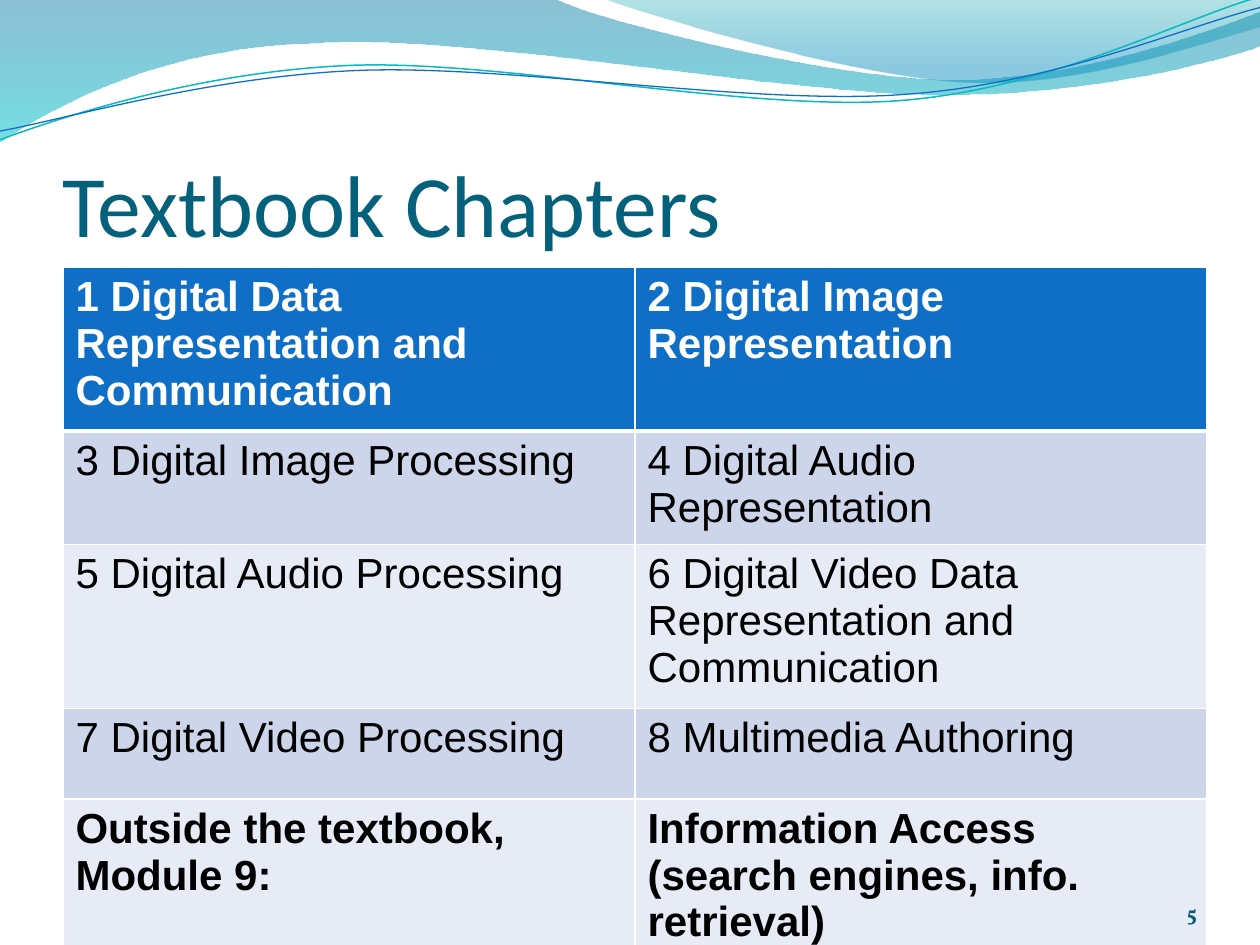
"""Build the Textbook Chapters slide: wave header, title, chapter table and page number."""
from lxml.etree import SubElement
from pptx import Presentation
from pptx.dml.color import RGBColor
from pptx.enum.text import MSO_ANCHOR as Anchor, PP_ALIGN as Align
from pptx.oxml import parse_xml
from pptx.oxml.ns import nsdecls, qn
from pptx.util import Inches, Pt

CHAPTERS = [
    ("1 Digital Data Representation and Communication", "2 Digital Image Representation"),
    ("3 Digital Image Processing", "4 Digital Audio Representation"),
    ("5 Digital Audio Processing", "6 Digital Video Data Representation and Communication"),
    ("7 Digital Video Processing", "8 Multimedia Authoring"),
    ("Outside the textbook, Module 9:", "Information Access (search engines, info. retrieval)"),
]
ROW_HEIGHTS = [1.24, 0.84, 1.24, 0.72, 1.22]
COLUMN_WIDTH = 4.54
HEADER_FILL, BAND_FILLS = "0F6FC6", ("E7EBF5", "CCD5EA")

WAVES = [
    {"steps": [(0, 0), (4.4, -0.01),
               (4.76, 0.17, 6.64, 0.63, 7.58, 0.63), (8.53, 0.63, 9.58, 0.26, 10, 0.09),
               (10.01, 0.36),
               (9.83, 0.44, 8.7, 0.76, 7.46, 0.75), (6.22, 0.75, 3.82, 0.28, 2.57, 0.34),
               (1.29, 0.36, 0.46, 0.83, -0.01, 1.13), (0, 0)],
     "stops": [(0, "0074A1", 45), (1, "00C6CF", 55)]},
    {"steps": [(4.79, -0.01),
               (5.09, 0.11, 6.82, 0.62, 7.69, 0.65), (8.56, 0.69, 9.61, 0.32, 10, 0.21),
               (10, 0), (4.79, -0.01)],
     "stops": [(0, "00A1A9", 30), (0.8, "008BBF", 45)]},
    {"steps": [(0, 1.11),
               (0.48, 0.93, 1.58, 0.57, 2.77, 0.52), (3.95, 0.47, 5.93, 0.89, 7.13, 0.8),
               (8.33, 0.71, 9.38, 0.15, 9.98, -0.02)],
     "line": ("0AB8BF", 0.85)},
    {"steps": [(0, 1.04),
               (0.47, 0.96, 1.64, 0.61, 2.83, 0.56), (4.03, 0.51, 5.97, 0.84, 7.17, 0.75),
               (8.36, 0.67, 9.41, 0.21, 10, 0.06)],
     "line": ("0F6FC6", 0.75)},
]
TEXTS = [
    {"text": "Textbook Chapters", "at": (0.5, 0.77, 9, 1.25), "top": 0.05, "align": Align.LEFT,
     "font": {"size": Pt(50), "name": "Calibri", "bold": False}, "color": "04617B"},
    {"text": "5", "at": (8.67, 6.95, 0.83, 0.4), "top": 0, "align": Align.RIGHT,
     "font": {"size": Pt(12), "name": "Vollkorn", "bold": True}, "color": "045D75"},
]


def rgb(color):
    return RGBColor.from_string(color)


def set_all(target, values):
    for name, value in values.items():
        setattr(target, name, value)


def write(frame, text, font, color, align=Align.LEFT):
    para = frame.paragraphs[0]
    para.alignment = align
    span = para.add_run()
    span.text = text
    set_all(span.font, font)
    span.font.color.rgb = rgb(color)


def draw_outline(page, steps, close):
    ends = [(Inches(step[-2]), Inches(step[-1])) for step in steps]
    builder = page.shapes.build_freeform(*ends[0])
    builder.add_line_segments(ends[1:], close=close)
    wave = builder.convert_to_shape()
    segments = list(wave._element.spPr.iter(qn("a:lnTo")))
    for segment, step in zip(segments, steps[1:]):
        if len(step) == 6:
            curve = segment.makeelement(qn("a:cubicBezTo"))
            for x, y in zip(step[::2], step[1::2]):
                point = SubElement(curve, qn("a:pt"))
                point.set("x", str(Inches(x) - wave.left))
                point.set("y", str(Inches(y) - wave.top))
            segment.getparent().replace(segment, curve)
    return wave


def add_wave(page, steps, stops=None, line=None):
    wave = draw_outline(page, steps, close=bool(stops))
    wave.shadow.inherit = False
    if line:
        wave.fill.background()
        wave.line.color.rgb = rgb(line[0])
        wave.line.width = Pt(line[1])
        return
    wave.line.fill.background()
    wave.fill.gradient()
    wave.fill.gradient_angle = 270
    for stop, (position, color, _) in zip(wave.fill.gradient_stops, stops):
        stop.position = position
        stop.color.rgb = rgb(color)
    for node, (_, _, opacity) in zip(wave._element.spPr.iter(qn("a:srgbClr")), stops):
        SubElement(node, qn("a:alpha")).set("val", str(opacity * 1000))


def add_text(page, text, at, top, align, font, color):
    frame = page.shapes.add_textbox(*map(Inches, at)).text_frame
    set_all(frame, {"word_wrap": True, "vertical_anchor": Anchor.BOTTOM, "margin_left": 0,
                    "margin_top": Inches(top), "margin_right": 0, "margin_bottom": 0})
    write(frame, text, font, color, align)


def set_borders(cell, widths):
    properties = cell._tc.get_or_add_tcPr()
    for index, (side, width) in enumerate(widths.items()):
        properties.insert(index, parse_xml(
            f'<a:ln{side} {nsdecls("a")} w="{Pt(width)}"><a:solidFill>'
            f'<a:srgbClr val="FFFFFF"/></a:solidFill></a:ln{side}>'))


def add_chapters(page):
    table = page.shapes.add_table(len(CHAPTERS), 2, Inches(0.5), Inches(2.12),
                                  Inches(2 * COLUMN_WIDTH), Inches(sum(ROW_HEIGHTS))).table
    for column in table.columns:
        column.width = Inches(COLUMN_WIDTH)
    for row, (height, titles) in enumerate(zip(ROW_HEIGHTS, CHAPTERS)):
        table.rows[row].height = Inches(height)
        header = row == 0
        bold = row in (0, len(CHAPTERS) - 1)
        for column, title in enumerate(titles):
            cell = table.cell(row, column)
            cell.fill.solid()
            cell.fill.fore_color.rgb = rgb(HEADER_FILL if header else BAND_FILLS[row % 2])
            set_borders(cell, {"L": 1, "R": 1, "T": 3 if row == 1 else 1, "B": 3 if header else 1})
            write(cell.text_frame, title, {"size": Pt(24), "name": "Arial", "bold": bold},
                  "FFFFFF" if header else "000000")


def main():
    deck = Presentation()
    set_all(deck, {"slide_width": Inches(10), "slide_height": Inches(7.5)})
    page = deck.slides.add_slide(deck.slide_layouts[6])
    for wave in WAVES:
        add_wave(page, **wave)
    title, number = TEXTS
    add_text(page, **title)
    add_chapters(page)
    add_text(page, **number)
    deck.save("out.pptx")


if __name__ == "__main__":
    main()
